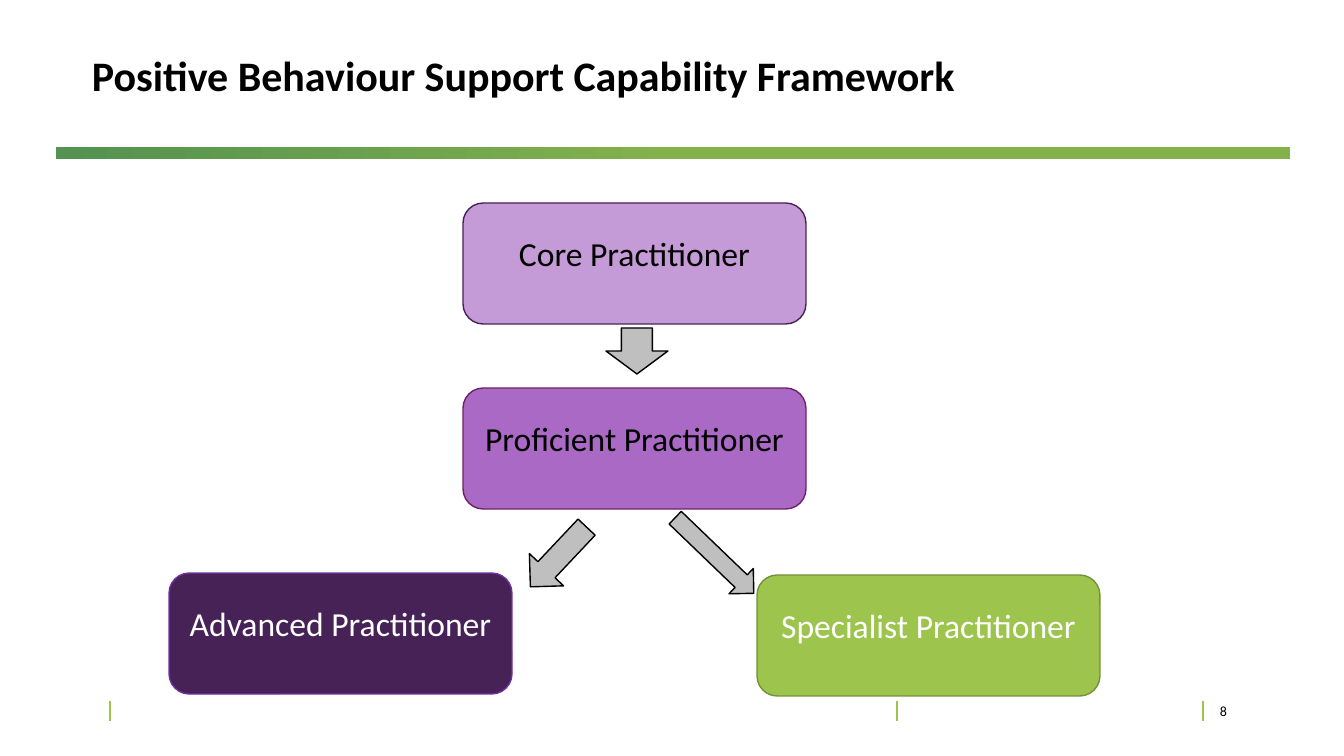
"""Build the Positive Behaviour Support Capability Framework slide."""
from lxml.etree import SubElement
from pptx import Presentation
from pptx.dml.color import RGBColor
from pptx.enum.shapes import MSO_CONNECTOR, MSO_SHAPE
from pptx.enum.text import MSO_ANCHOR, PP_ALIGN
from pptx.oxml.ns import qn
from pptx.util import Pt

PX = 914400 / 100.8
COLORS = {
    "black": "000000", "white": "FFFFFF", "arrow": "BFBFBF",
    "bar_start": "539250", "bar_end": "83B14C", "green": "9DC44D",
    "green_edge": "749139", "lilac": "C59BD7", "lilac_edge": "462256",
    "purple": "A969C4", "purple_edge": "6F2167",
    "plum": "472257", "plum_edge": "7030A0",
}


def px(*lengths):
    return [round(length * PX) for length in lengths]


def write_text(shape, text, size, color="black", bold=False, align=PP_ALIGN.LEFT,
               line_spacing=None, margin=0):
    frame = shape.text_frame
    frame.word_wrap = True
    frame.vertical_anchor = MSO_ANCHOR.MIDDLE
    frame.margin_left = frame.margin_right = frame.margin_top = frame.margin_bottom = px(margin)[0]
    paragraph = frame.paragraphs[0]
    paragraph.alignment = align
    if line_spacing:
        paragraph.line_spacing = Pt(line_spacing)
    run = paragraph.add_run()
    run.text = text
    run.font.name = "Calibri"
    run.font.size = Pt(size)
    run.font.bold = bold
    run.font.color.rgb = RGBColor.from_string(COLORS[color])


presentation = Presentation()
presentation.slide_width, presentation.slide_height = px(1344, 756)
slide = presentation.slides.add_slide(presentation.slide_layouts[6])
shapes = slide.shapes

for x in (110, 897, 1203):
    divider = shapes.add_connector(MSO_CONNECTOR.STRAIGHT, *px(x, 701, x, 721))
    divider.line.color.rgb = RGBColor.from_string(COLORS["green"])
    divider.line.width = Pt(1)
    SubElement(divider.element.spPr, qn("a:effectLst"))

bar = shapes.add_shape(MSO_SHAPE.RECTANGLE, *px(56, 147, 1234, 12))
bar.shadow.inherit = False
bar.line.fill.background()
bar.fill.gradient()
bar.fill.gradient_angle = 0
for stop, position, color in zip(bar.fill.gradient_stops, (0, 0.5), ("bar_start", "bar_end")):
    stop.position = position
    stop.color.rgb = RGBColor.from_string(COLORS[color])

title = shapes.add_textbox(*px(92, 0, 889, 152))
write_text(title, "Positive Behaviour Support Capability Framework", 30, bold=True, line_spacing=34)
slide_number = shapes.add_textbox(*px(1220, 701, 40, 20))
write_text(slide_number, "8", 10)

levels = [
    ("Core Practitioner", 463, 203, "lilac", "lilac_edge", "black"),
    ("Proficient Practitioner", 463, 388, "purple", "purple_edge", "black"),
    ("Advanced Practitioner", 169, 573, "plum", "plum_edge", "white"),
    ("Specialist Practitioner", 757, 575, "green", "green_edge", "white"),
]
for label, left, top, fill, edge, text_color in levels:
    box = shapes.add_shape(MSO_SHAPE.ROUNDED_RECTANGLE, *px(left, top, 343, 121))
    box.shadow.inherit = False
    box.fill.solid()
    box.fill.fore_color.rgb = RGBColor.from_string(COLORS[fill])
    box.line.color.rgb = RGBColor.from_string(COLORS[edge])
    box.line.width = Pt(1)
    write_text(box, label, 24, color=text_color, align=PP_ALIGN.CENTER, line_spacing=14, margin=5)

arrows = [
    (606, 328, 62, 46, 0),
    (535, 516, 47, 82, 43.3),
    (697, 501, 35, 109, 313.9),
]
for left, top, width, height, rotation in arrows:
    arrow = shapes.add_shape(MSO_SHAPE.DOWN_ARROW, *px(left, top, width, height))
    arrow.rotation = rotation
    arrow.shadow.inherit = False
    arrow.fill.solid()
    arrow.fill.fore_color.rgb = RGBColor.from_string(COLORS["arrow"])
    arrow.line.color.rgb = RGBColor.from_string(COLORS["black"])
    arrow.line.width = Pt(1)

presentation.save("out.pptx")
